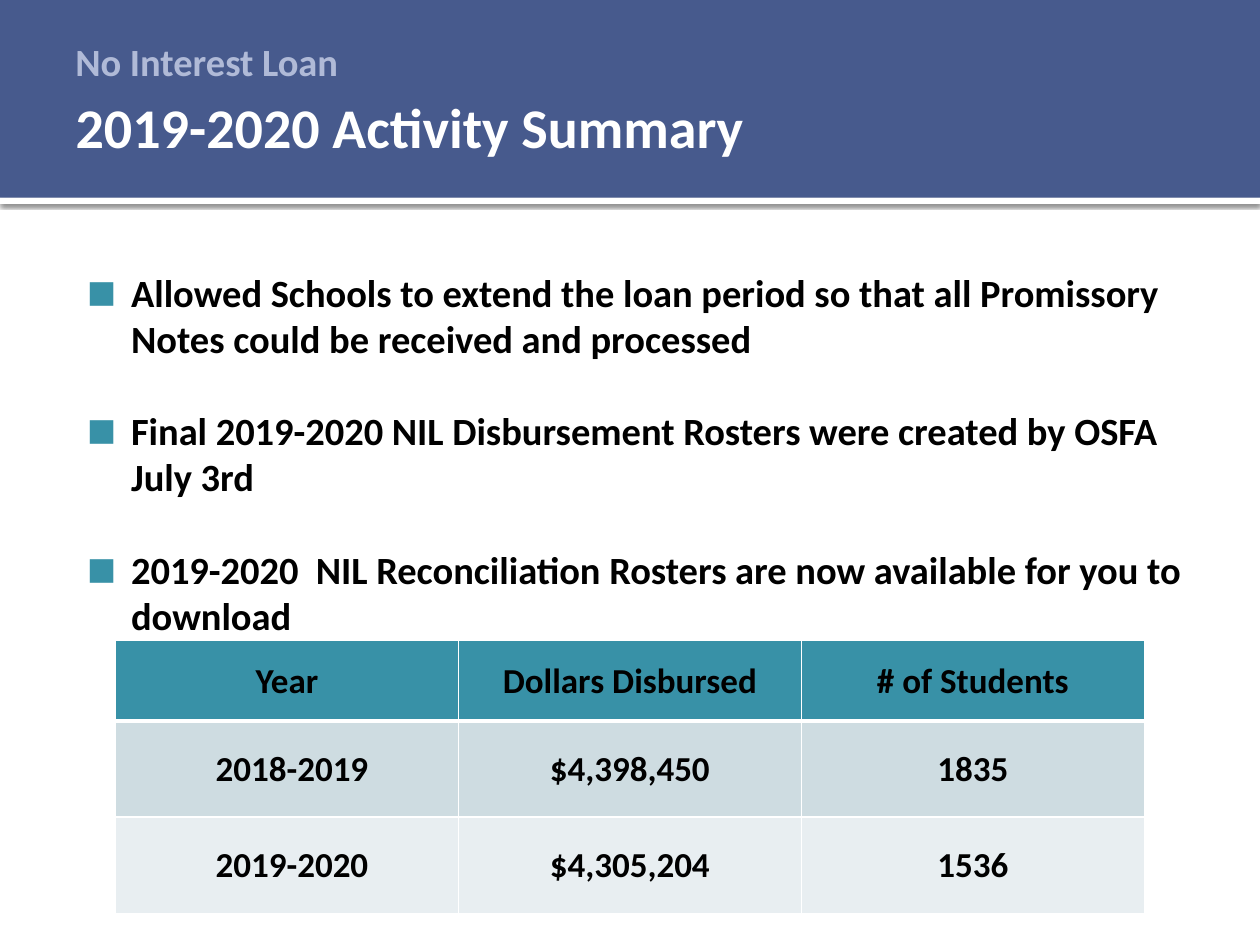
from lxml.etree import SubElement
from pptx import Presentation
from pptx.dml.color import RGBColor
from pptx.enum.shapes import MSO_SHAPE
from pptx.enum.text import MSO_ANCHOR, MSO_AUTO_SIZE, PP_ALIGN
from pptx.oxml.ns import qn
from pptx.util import Pt

TITLE = "2019-2020 Activity Summary"
PROGRAM = "No Interest Loan"
UPDATES = [
    "Allowed Schools to extend the loan period so that all Promissory Notes could be received and processed",
    "Final 2019-2020 NIL Disbursement Rosters were created by OSFA July 3rd",
    "2019-2020  NIL Reconciliation Rosters are now available for you to download",
]
DISBURSEMENTS = [
    ("Year", "Dollars Disbursed", "# of Students"),
    ("2018-2019", "$4,398,450", "1835"),
    ("2019-2020", "$4,305,204", "1536"),
]

THEME = {
    "font": "Calibri",
    "band": "475A8D", "white": "FFFFFF", "program": "B0BAD7",
    "text": "000000", "accent": "3891A7",
    "rows": ("3891A7", "CEDCE1", "E8EEF1"),
    "title_size": 32, "body_size": 22, "table_size": 20,
}
SLIDE_W, SLIDE_H = 720, 540
BAND_H, RULE_H = 113, 3.6
MARGIN = 36
LINE = 26.4
HANG = 25.2
TABLE_LEFT, TABLE_TOP, COLUMN_W = 66, 366, 196
ROW_HEIGHTS = (46, 55, 55)
THIN, HEAVY = 1, 3


def rgb(name):
    return RGBColor.from_string(THEME.get(name, name))


def place(shape, left, top, width, height):
    shape.left, shape.top, shape.width, shape.height = map(Pt, (left, top, width, height))


def set_insets(holder, left, top, right, bottom):
    """Set the margins of a text frame or a table cell."""
    holder.margin_left, holder.margin_top = Pt(left), Pt(top)
    holder.margin_right, holder.margin_bottom = Pt(right), Pt(bottom)


def write(paragraph, text, size, color):
    run = paragraph.add_run()
    run.text = text
    run.font.name = THEME["font"]
    run.font.size = Pt(THEME[size])
    run.font.bold = True
    run.font.color.rgb = rgb(color)


def add_strip(slide, top, height, color):
    """Add a full-width strip behind the title."""
    strip = slide.shapes.add_shape(MSO_SHAPE.RECTANGLE, 0, Pt(top), Pt(SLIDE_W), Pt(height))
    strip.shadow.inherit = False
    strip.fill.solid()
    strip.fill.fore_color.rgb = rgb(color)
    strip.line.fill.background()
    slide.shapes.title.element.addprevious(strip.element)
    return strip


def add_shadow(shape):
    effects = shape.element.spPr.find(qn("a:effectLst"))
    shadow = SubElement(effects, qn("a:outerShdw"), blurRad=str(Pt(2.5)), dist=str(Pt(0.8)),
                        dir="5400000", rotWithShape="0")
    color = SubElement(shadow, qn("a:srgbClr"), val=THEME["text"])
    SubElement(color, qn("a:alpha"), val="60000")


def add_bullet(paragraph):
    props = paragraph._p.get_or_add_pPr()
    props.set("marL", str(Pt(34.6)))
    props.set("indent", str(-Pt(HANG)))
    bullet_color = SubElement(props, qn("a:buClr"))
    SubElement(bullet_color, qn("a:srgbClr"), val=THEME["accent"])
    SubElement(props, qn("a:buSzPct"), val="80000")
    SubElement(props, qn("a:buFont"), typeface=THEME["font"])
    SubElement(props, qn("a:buChar"), char="■")


def add_borders(cell, top, bottom):
    props = cell._tc.get_or_add_tcPr()
    for side, width in (("L", THIN), ("R", THIN), ("T", top), ("B", bottom)):
        line = SubElement(props, qn(f"a:ln{side}"), w=str(Pt(width)))
        fill = SubElement(line, qn("a:solidFill"))
        SubElement(fill, qn("a:srgbClr"), val=THEME["white"])


def add_header(slide):
    add_shadow(add_strip(slide, BAND_H, RULE_H, "white"))
    add_strip(slide, 0, BAND_H, "band")

    title = slide.shapes.title
    place(title, MARGIN, 48.2, SLIDE_W - 2 * MARGIN, 48.2)
    frame = title.text_frame
    frame.auto_size = MSO_AUTO_SIZE.NONE
    frame.vertical_anchor = MSO_ANCHOR.MIDDLE
    set_insets(frame, 7.2, 3.6, 3.6, 3.6)
    frame.paragraphs[0].alignment = PP_ALIGN.LEFT
    write(frame.paragraphs[0], TITLE, "title_size", "white")

    program = slide.shapes.add_textbox(Pt(MARGIN), Pt(18), Pt(264), Pt(34))
    program.text_frame.word_wrap = True
    write(program.text_frame.paragraphs[0], PROGRAM, "body_size", "program")


def add_updates(slide):
    body = slide.placeholders[1]
    place(body, MARGIN, 120, SLIDE_W - 2 * MARGIN, 414)
    frame = body.text_frame
    frame.auto_size = MSO_AUTO_SIZE.NONE
    set_insets(frame, 4.3, 7.2 + LINE, 7.2, 3.6)
    for index, update in enumerate(UPDATES):
        paragraph = frame.add_paragraph() if index else frame.paragraphs[0]
        paragraph.line_spacing = Pt(LINE)
        paragraph.space_before = Pt(LINE if index else 0)
        add_bullet(paragraph)
        write(paragraph, update, "body_size", "text")


def add_disbursements(slide):
    columns = len(DISBURSEMENTS[0])
    table = slide.shapes.add_table(
        len(DISBURSEMENTS), columns, Pt(TABLE_LEFT), Pt(TABLE_TOP),
        Pt(columns * COLUMN_W), Pt(sum(ROW_HEIGHTS))).table
    for column in table.columns:
        column.width = Pt(COLUMN_W)
    for r, values in enumerate(DISBURSEMENTS):
        table.rows[r].height = Pt(ROW_HEIGHTS[r])
        for c, value in enumerate(values):
            cell = table.cell(r, c)
            add_borders(cell, HEAVY if r == 1 else THIN, HEAVY if r == 0 else THIN)
            cell.fill.solid()
            cell.fill.fore_color.rgb = rgb(THEME["rows"][r])
            cell.vertical_anchor = MSO_ANCHOR.MIDDLE
            set_insets(cell, 6.5 if r and c == 0 else 0.7, 0.7, 0.7, 0)
            paragraph = cell.text_frame.paragraphs[0]
            paragraph.alignment = PP_ALIGN.CENTER
            write(paragraph, value, "table_size", "text")


def main():
    deck = Presentation()
    deck.slide_width, deck.slide_height = Pt(SLIDE_W), Pt(SLIDE_H)
    slide = deck.slides.add_slide(deck.slide_layouts[1])
    add_header(slide)
    add_updates(slide)
    add_disbursements(slide)
    deck.save("out.pptx")


if __name__ == "__main__":
    main()
